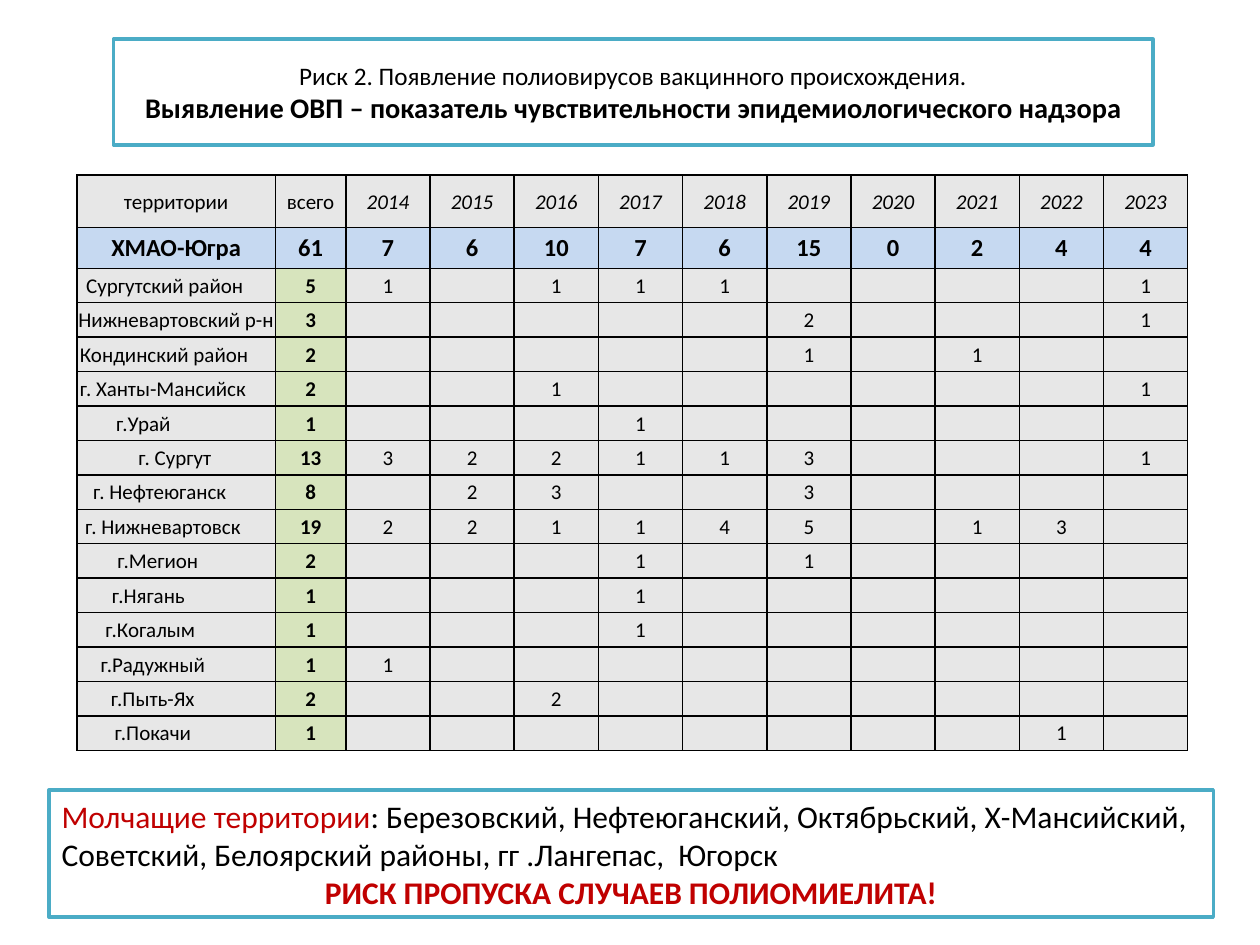
"""Build the slide on detected cases of acute flaccid paralysis by territory and year."""
from lxml.etree import SubElement
from pptx import Presentation
from pptx.dml.color import RGBColor
from pptx.enum.shapes import MSO_SHAPE
from pptx.enum.text import MSO_ANCHOR, MSO_AUTO_SIZE, PP_ALIGN
from pptx.oxml.ns import qn
from pptx.util import Inches, Pt

BLACK = RGBColor(0x00, 0x00, 0x00)
WHITE = RGBColor(0xFF, 0xFF, 0xFF)
RED = RGBColor(0xC0, 0x00, 0x00)
TEAL = RGBColor(0x4B, 0xAC, 0xC6)
GREY = RGBColor(0xE7, 0xE7, 0xE7)
BLUE = RGBColor(0xC6, 0xD9, 0xF1)
GREEN = RGBColor(0xD7, 0xE4, 0xBD)

YEARS = range(2014, 2024)
TERRITORIES = [
    ("Сургутский район", 0.19, 5, {2014: 1, 2016: 1, 2017: 1, 2018: 1, 2023: 1}),
    ("Нижневартовский р-н", 0.01, 3, {2019: 2, 2023: 1}),
    ("Кондинский район", 0.2, 2, {2019: 1, 2021: 1}),
    ("г. Ханты-Мансийск", 0.22, 2, {2016: 1, 2023: 1}),
    ("г.Урай", 0.53, 1, {2017: 1}),
    ("г. Сургут", 0.03, 13, {2014: 3, 2015: 2, 2016: 2, 2017: 1, 2018: 1, 2019: 3, 2023: 1}),
    ("г. Нефтеюганск", 0.27, 8, {2015: 2, 2016: 3, 2019: 3}),
    ("г. Нижневартовск", 0.22, 19,
     {2014: 2, 2015: 2, 2016: 1, 2017: 1, 2018: 4, 2019: 5, 2021: 1, 2022: 3}),
    ("г.Мегион", 0.3, 2, {2017: 1, 2019: 1}),
    ("г.Нягань", 0.45, 1, {2017: 1}),
    ("г.Когалым", 0.42, 1, {2017: 1}),
    ("г.Радужный", 0.38, 1, {2014: 1}),
    ("г.Пыть-Ях", 0.38, 2, {2016: 2}),
    ("г.Покачи", 0.38, 1, {2022: 1}),
]


def add_text(paragraph, text, size, color=BLACK, bold=False, italic=False):
    run = paragraph.add_run()
    run.text = text
    font_format = {"name": "Calibri", "size": Pt(size), "bold": bold, "italic": italic}
    for attribute, value in font_format.items():
        setattr(run.font, attribute, value)
    run.font.color.rgb = color


def frame_box(box, left, top, width, height):
    place = {"left": left, "top": top, "width": width, "height": height}
    for attribute, value in place.items():
        setattr(box, attribute, Inches(value))
    box.fill.solid()
    box.fill.fore_color.rgb = WHITE
    box.line.color.rgb = TEAL
    box.line.width = Pt(2)
    box.text_frame.word_wrap = True
    box.text_frame.auto_size = MSO_AUTO_SIZE.NONE
    box.text_frame.vertical_anchor = MSO_ANCHOR.MIDDLE


presentation = Presentation()
presentation.slide_width, presentation.slide_height = Inches(10), Inches(7.5)
slide = presentation.slides.add_slide(presentation.slide_layouts[5])

heading = slide.shapes.title
frame_box(heading, 0.9, 0.31, 8.25, 0.84)
heading_line = heading.text_frame.paragraphs[0]
heading_line.alignment = PP_ALIGN.CENTER
add_text(heading_line, "Риск 2. Появление полиовирусов вакцинного происхождения.", 14.4)
heading_line.add_line_break()
add_text(heading_line, "Выявление ОВП – показатель чувствительности эпидемиологического надзора",
         16.2, bold=True)

rows = [["территории", "всего", *YEARS],
        ["ХМАО-Югра", 61, 7, 6, 10, 7, 6, 15, 0, 2, 4, 4]]
rows += [[name, total, *(cases.get(year, "") for year in YEARS)]
         for name, _, total, cases in TERRITORIES]
name_insets = [0.01, 0.01] + [inset for _, inset, _, _ in TERRITORIES]
column_widths = [1.58, 0.56] + [0.67] * len(YEARS)
row_heights = [0.41, 0.32] + [0.27] * len(TERRITORIES)

cases_table = slide.shapes.add_table(
    len(rows), len(column_widths), Inches(0.61), Inches(1.39), Inches(8.82), Inches(4.57)).table
for column, width in zip(cases_table.columns, column_widths):
    column.width = int(Inches(8.82) * width / sum(column_widths))
for row, height in zip(cases_table.rows, row_heights):
    row.height = int(Inches(4.57) * height / sum(row_heights))

for row_index, values in enumerate(rows):
    for column_index, value in enumerate(values):
        cell = cases_table.cell(row_index, column_index)
        inset = name_insets[row_index] if column_index == 0 else 0.01
        cell_format = {"margin_left": Inches(0.01), "margin_right": Inches(inset),
                       "margin_top": Inches(0.01), "margin_bottom": 0,
                       "vertical_anchor": MSO_ANCHOR.MIDDLE}
        for attribute, setting in cell_format.items():
            setattr(cell, attribute, setting)
        entry = cell.text_frame.paragraphs[0]
        entry.alignment = PP_ALIGN.CENTER
        is_region = row_index == 1
        is_total = row_index > 1 and column_index == 1
        if value != "":
            add_text(entry, str(value), 14 if is_region else 12, bold=is_region or is_total,
                     italic=row_index == 0 and column_index > 1)
        else:
            SubElement(entry._p, qn("a:endParaRPr"), sz="1200")
        properties = cell._tc.get_or_add_tcPr()
        for side in ("a:lnL", "a:lnR", "a:lnT", "a:lnB"):
            border = SubElement(properties, qn(side), w=str(Pt(1)))
            SubElement(SubElement(border, qn("a:solidFill")), qn("a:srgbClr"), val=str(BLACK))
        cell.fill.solid()
        cell.fill.fore_color.rgb = BLUE if is_region else GREEN if is_total else GREY

silent_territories = slide.shapes.add_shape(MSO_SHAPE.RECTANGLE, 0, 0, 0, 0)
silent_territories.shadow.inherit = False
frame_box(silent_territories, 0.39, 6.27, 9.24, 1.01)
silent_list = silent_territories.text_frame.paragraphs[0]
silent_list.alignment = PP_ALIGN.LEFT
add_text(silent_list, "Молчащие территории", 18, RED)
add_text(silent_list, ": Березовский, Нефтеюганский, Октябрьский, Х-Мансийский, "
         "Советский, Белоярский районы, гг .Лангепас,  Югорск", 18)
warning = silent_territories.text_frame.add_paragraph()
warning.alignment = PP_ALIGN.CENTER
add_text(warning, "РИСК ПРОПУСКА СЛУЧАЕВ ПОЛИОМИЕЛИТА!", 18, RED, bold=True)

presentation.save("out.pptx")
